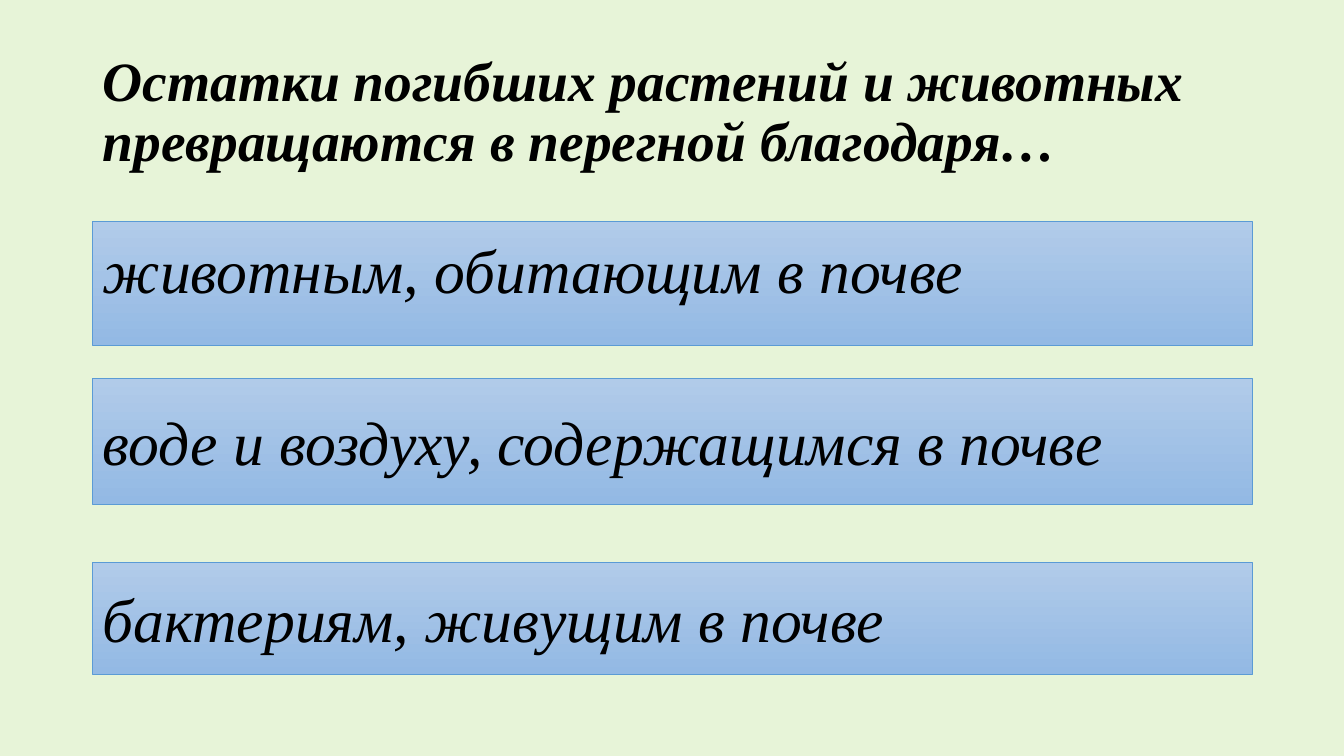
from pptx import Presentation
from pptx.dml.color import RGBColor
from pptx.enum.shapes import MSO_SHAPE
from pptx.enum.text import MSO_ANCHOR, PP_ALIGN
from pptx.util import Cm, Pt

BUTTON = MSO_SHAPE.ACTION_BUTTON_CUSTOM
MIDDLE = MSO_ANCHOR.MIDDLE
LEFT = PP_ALIGN.LEFT
FONT = "Times New Roman"
COLORS = {"back": "E7F4D8", "text": "000000", "top": "B1CBE9",
          "low": "93B9E4", "edge": "5B9BD5"}
EDGE, WIDTH = 2.34, 29.21
TITLE = "Остатки погибших растений и животных превращаются в перегной благодаря…"
ANSWERS = [
    ("животным, обитающим в почве", 5.59, 3.12, 0.89),
    ("воде и воздуху, содержащимся в почве", 9.53, 3.18, 0.13),
    ("бактериям, живущим в почве", 14.17, 2.82, 0.13),
]


def color(name):
    """Return the named colour."""
    return RGBColor.from_string(COLORS[name])


def write(shape, text, size, bold=False):
    """Put italic text in a shape and return its paragraph."""
    frame = shape.text_frame
    frame.word_wrap = True
    frame.vertical_anchor = MIDDLE
    para = frame.paragraphs[0]
    para.text = text
    para.alignment = LEFT
    font = para.font
    font.name, font.size = FONT, Pt(size)
    font.bold, font.italic = bold, True
    font.color.rgb = color("text")
    return para


def add_title(slide, box):
    """Place the question in its box."""
    shape = slide.shapes.add_textbox(*map(Cm, box))
    write(shape, TITLE, 39.6, bold=True).line_spacing = 0.9


def add_answer(slide, box, text, inset):
    """Place one answer button, its text raised by the bottom inset."""
    shape = slide.shapes.add_shape(BUTTON, *map(Cm, box))
    shape.shadow.inherit = False
    shape.fill.gradient()
    shape.fill.gradient_angle = 270
    for stop, name in zip(shape.fill.gradient_stops, ("top", "low")):
        stop.color.rgb = color(name)
    shape.line.color.rgb = color("edge")
    shape.line.width = Pt(0.5)
    write(shape, text, 44)
    shape.text_frame.margin_bottom = Cm(inset)


def main():
    """Build and save the slide."""
    deck = Presentation()
    deck.slide_width, deck.slide_height = Cm(33.87), Cm(19.05)
    slide = deck.slides.add_slide(deck.slide_layouts[6])
    fill = slide.background.fill
    fill.solid()
    fill.fore_color.rgb = color("back")
    add_title(slide, (EDGE, 1.02, WIDTH, 3.68))
    for text, top, height, inset in ANSWERS:
        add_answer(slide, (EDGE, top, WIDTH, height), text, inset)
    deck.save("out.pptx")


if __name__ == "__main__":
    main()
